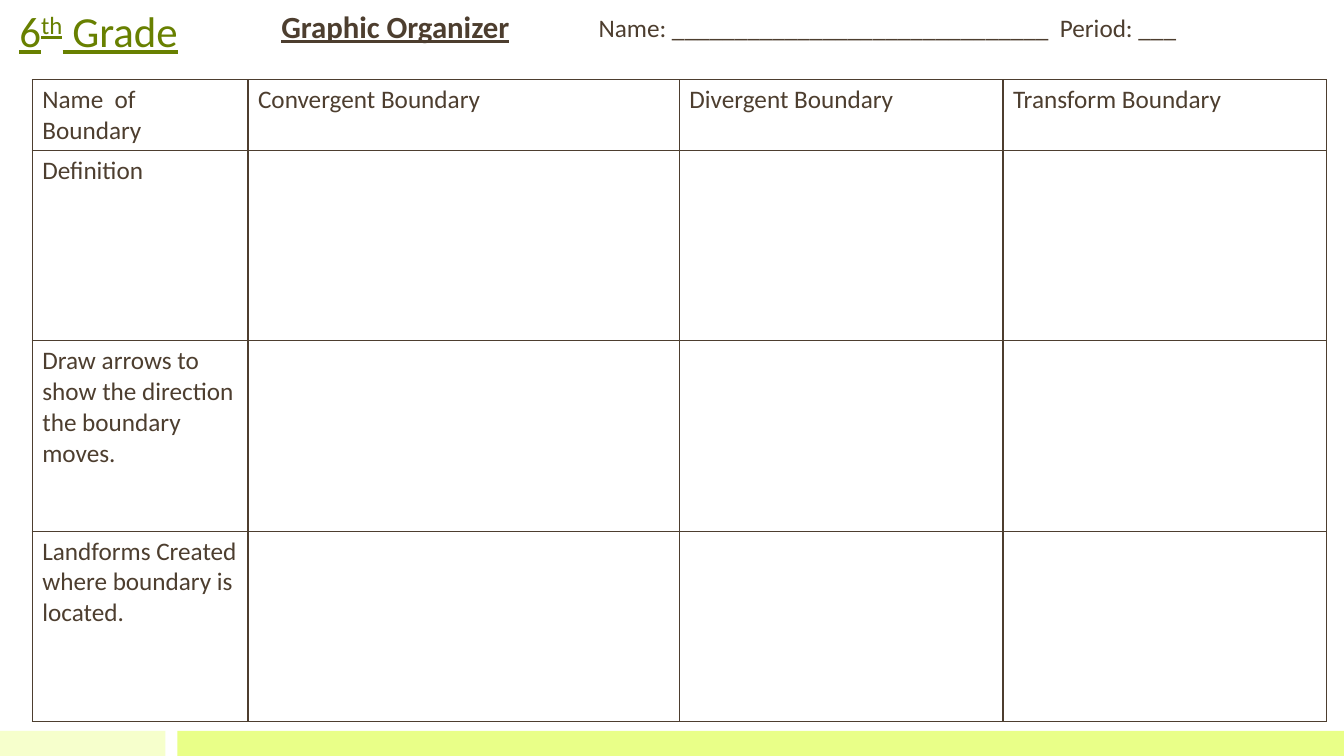
from lxml import etree
from pptx import Presentation
from pptx import util as u
from pptx.dml.color import RGBColor
from pptx.enum import shapes, text
from pptx.oxml import ns


def paint(target, color):
    target.fore_color.rgb = RGBColor.from_string(color)


class Organizer:
    """Draws a worksheet slide, with lengths in percent of the slide's size."""

    font, ink, accent = "Calibri", "4D3E2F", "688000"

    def __init__(self, deck):
        self.deck = deck
        self.slide = deck.slides.add_slide(deck.slide_layouts[1])

    def across(self, share):
        return round(self.deck.slide_width * share / 100)

    def down(self, share):
        return round(self.deck.slide_height * share / 100)

    def box(self, left, top, width, height):
        return self.across(left), self.down(top), self.across(width), self.down(height)

    def bar(self, area, color):
        strip = self.slide.shapes.add_shape(shapes.MSO_SHAPE.RECTANGLE, *self.box(*area))
        strip.shadow.inherit = False
        strip.fill.solid()
        paint(strip.fill, color)
        strip.line.fill.background()

    def style(self, paragraph, size, color=None, heading=False, bold=False):
        font = paragraph.font
        font.name, font.size = self.font, u.Pt(size)
        font.bold, font.underline = bold, heading
        font.fill.solid()
        paint(font.fill, color or self.ink)
        paragraph.alignment = text.PP_ALIGN.LEFT

    def heading(self, holder, area, parts, size, color=None, bold=False, spacing=1.0):
        holder.left, holder.top, holder.width, holder.height = self.box(*area)
        frame = holder.text_frame
        frame.auto_size = text.MSO_AUTO_SIZE.NONE
        frame.vertical_anchor = text.MSO_ANCHOR.BOTTOM
        line = frame.paragraphs[0]
        for words, raised in parts:
            run = line.add_run()
            run.text = words
            if raised:
                run._r.get_or_add_rPr().set("baseline", "30000")
        self.style(line, size, color, heading=True, bold=bold)
        line.line_spacing, line.space_before = spacing, u.Pt(0)
        props = line._p.get_or_add_pPr()
        props.set("marL", "0")
        props.set("indent", "0")
        no_bullet = etree.Element(ns.qn("a:buNone"))
        props.insert_element_before(no_bullet, "a:tabLst", "a:defRPr", "a:extLst")

    def label(self, area, words, size):
        frame = self.slide.shapes.add_textbox(*self.box(*area)).text_frame
        frame.word_wrap = True
        frame.text = words
        self.style(frame.paragraphs[0], size)

    def border(self, cell):
        props = cell._tc.get_or_add_tcPr()
        for side in ("lnL", "lnR", "lnT", "lnB"):
            edge = etree.SubElement(props, ns.qn(f"a:{side}"), w=str(u.Pt(1)))
            fill = etree.SubElement(edge, ns.qn("a:solidFill"))
            etree.SubElement(fill, ns.qn("a:srgbClr"), val=self.ink)

    def table(self, area, spans, heights, headers, prompts, size):
        rows = [headers] + [[prompt] + [""] * (len(spans) - 1) for prompt in prompts]
        grid = self.slide.shapes.add_table(len(rows), len(spans), *self.box(*area)).table
        grid.first_row = grid.horz_banding = False
        for column, span in zip(grid.columns, spans):
            column.width = self.across(area[2] * span / sum(spans))
        for row, height, entries in zip(grid.rows, heights, rows):
            row.height = self.down(height)
            for cell, words in zip(row.cells, entries):
                cell.text = words
                self.style(cell.text_frame.paragraphs[0], size)
                self.border(cell)
                cell.fill.background()


def main():
    deck = Presentation()
    deck.slide_width, deck.slide_height = u.Inches(13.33), u.Inches(7.5)
    sheet = Organizer(deck)
    grade, topic = sheet.slide.placeholders
    sheet.bar((0, 96.67, 12.3, 3.33), "F6FFCC")
    sheet.bar((13.2, 96.67, 86.8, 3.33), "E9FF88")
    sheet.heading(grade, (0.7, 0.93, 76.9, 7.2),
                  [("6", False), ("th", True), (" Grade", False)], 30.6, sheet.accent)
    sheet.heading(topic, (20.18, 0.93, 37.8, 5.6),
                  [("Graphic Organizer", False)], 22, bold=True, spacing=0.8)
    sheet.label((43.8, 0.93, 44.63, 5.33),
                "Name: " + "_" * 30 + "  Period: ___", 18)
    sheet.table(
        (2.4, 10.53, 96.3, 84.8), (2, 4, 3, 3), [9.2] + [25.2] * 3,
        ["Name  of Boundary", "Convergent Boundary", "Divergent Boundary", "Transform Boundary"],
        ["Definition",
         "Draw arrows to show the direction the boundary moves.",
         "Landforms Created where boundary is located."], 18)
    deck.save("out.pptx")


if __name__ == "__main__":
    main()
